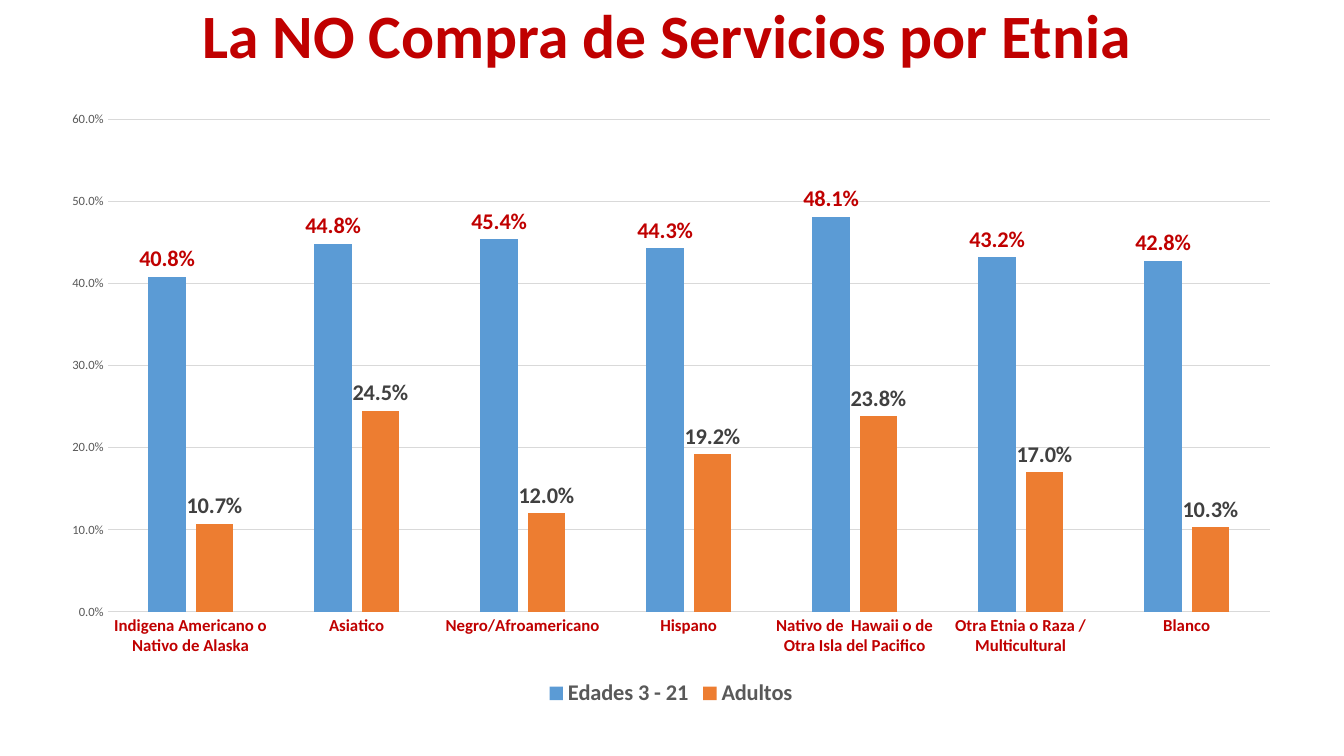
from pptx import Presentation
from pptx.chart.data import CategoryChartData
from pptx.dml.color import RGBColor
from pptx.enum import chart as ch, text as tx
from pptx.util import Inches, Pt

COLORS = {
    "red": "C00000", "blue": "5B9BD5", "orange": "ED7D31",
    "dark": "404040", "gray": "595959", "grid": "D9D9D9", "black": "000000",
}
PERCENT = "0.0%"


def color(name):
    return RGBColor.from_string(COLORS[name])


def style_font(font, size, color_name, bold=False):
    for attribute, value in {"name": "Calibri", "size": Pt(size), "bold": bold}.items():
        setattr(font, attribute, value)
    font.color.rgb = color(color_name)


prs = Presentation()
prs.slide_width, prs.slide_height = Inches(13.33), Inches(7.5)
slide = prs.slides.add_slide(prs.slide_layouts[6])

# Title
title = slide.shapes.add_textbox(Inches(0.87), Inches(0), Inches(11.5), Inches(0.77))
title_frame = title.text_frame
title_frame.word_wrap = True
title_frame.vertical_anchor = tx.MSO_ANCHOR.MIDDLE
heading = title_frame.paragraphs[0]
heading.alignment = tx.PP_ALIGN.CENTER
heading.line_spacing = 0.9
heading_run = heading.add_run()
heading_run.text = "La NO Compra de Servicios por Etnia"
style_font(heading_run.font, 44, "red", True)

# Chart: name, values, bar color, label color
age_groups = [
    ("Edades 3 - 21", [0.408, 0.448, 0.454, 0.443, 0.481, 0.432, 0.428], "blue", "red"),
    ("Adultos", [0.107, 0.245, 0.12, 0.192, 0.238, 0.17, 0.103], "orange", "dark"),
]
purchases = CategoryChartData(number_format=PERCENT)
purchases.categories = [
    "Indigena Americano o Nativo de Alaska", "Asiatico", "Negro/Afroamericano",
    "Hispano", "Nativo de  Hawaii o de Otra Isla del Pacifico",
    "Otra Etnia o Raza / Multicultural", "Blanco",
]
for name, values, _, _ in age_groups:
    purchases.add_series(name, values)

chart = slide.shapes.add_chart(
    ch.XL_CHART_TYPE.COLUMN_CLUSTERED,
    Inches(0.47), Inches(0.99), Inches(12.37), Inches(6.07), purchases,
).chart
style_font(chart.font, 10, "black")
chart.has_title = False
chart.has_legend = True
chart.legend.position = ch.XL_LEGEND_POSITION.BOTTOM
chart.legend.include_in_layout = False
style_font(chart.legend.font, 16, "gray", True)

bars = chart.plots[0]
bars.gap_width, bars.overlap = 219, -27
bars.vary_by_categories = False
for series, (_, _, bar_color, label_color) in zip(bars.series, age_groups):
    series.invert_if_negative = False
    series.format.fill.solid()
    series.format.fill.fore_color.rgb = color(bar_color)
    labels = series.data_labels
    style_font(labels.font, 16, label_color, True)
    for attribute, value in {
        "show_value": True, "number_format": PERCENT,
        "number_format_is_linked": False,
        "position": ch.XL_LABEL_POSITION.OUTSIDE_END,
    }.items():
        setattr(labels, attribute, value)

ethnicities, shares = chart.category_axis, chart.value_axis
style_font(ethnicities.tick_labels.font, 12, "red", True)
style_font(shares.tick_labels.font, 9, "gray")
for axis in (ethnicities, shares):
    axis.major_tick_mark = axis.minor_tick_mark = ch.XL_TICK_MARK.NONE
shares.minimum_scale, shares.maximum_scale, shares.major_unit = 0, 0.6, 0.1
shares.tick_labels.number_format = PERCENT
shares.tick_labels.number_format_is_linked = False
shares.format.line.fill.background()
shares.has_major_gridlines = True
for line in (ethnicities.format.line, shares.major_gridlines.format.line):
    line.width = Pt(0.75)
    line.color.rgb = color("grid")

prs.save("out.pptx")
